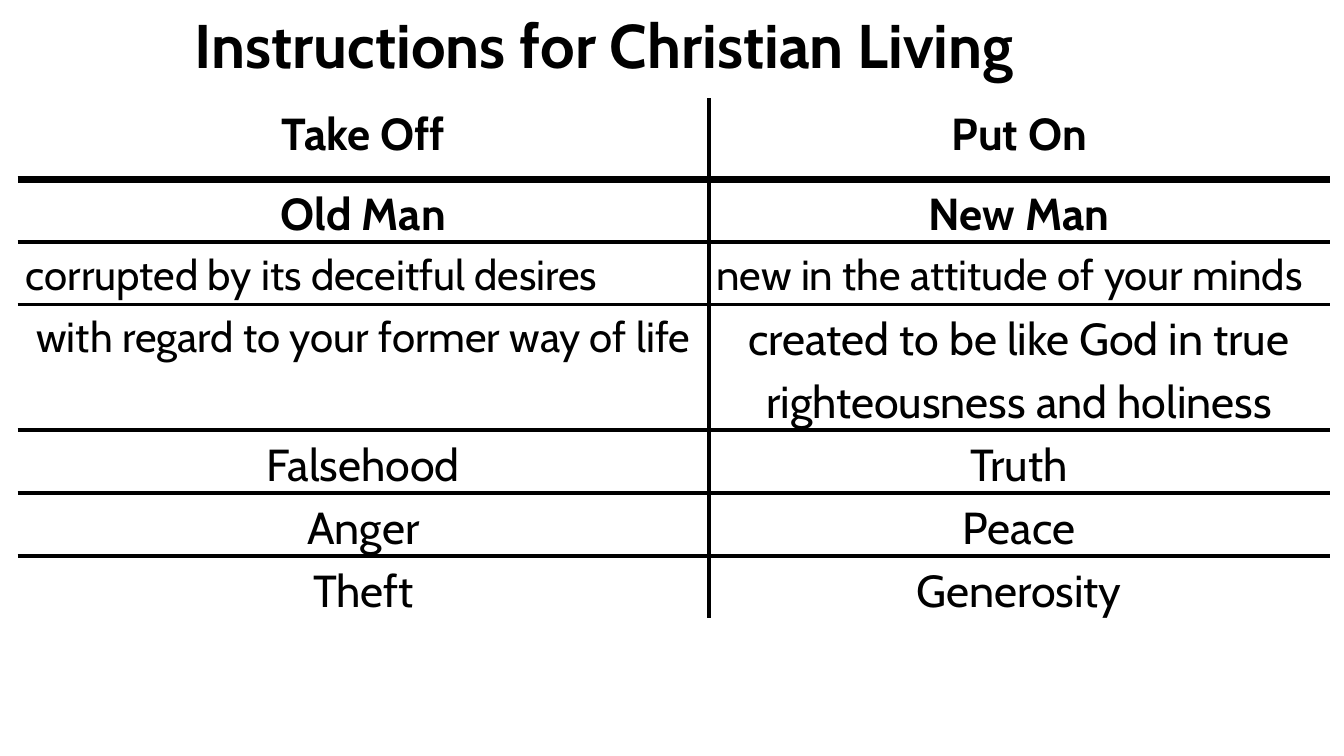
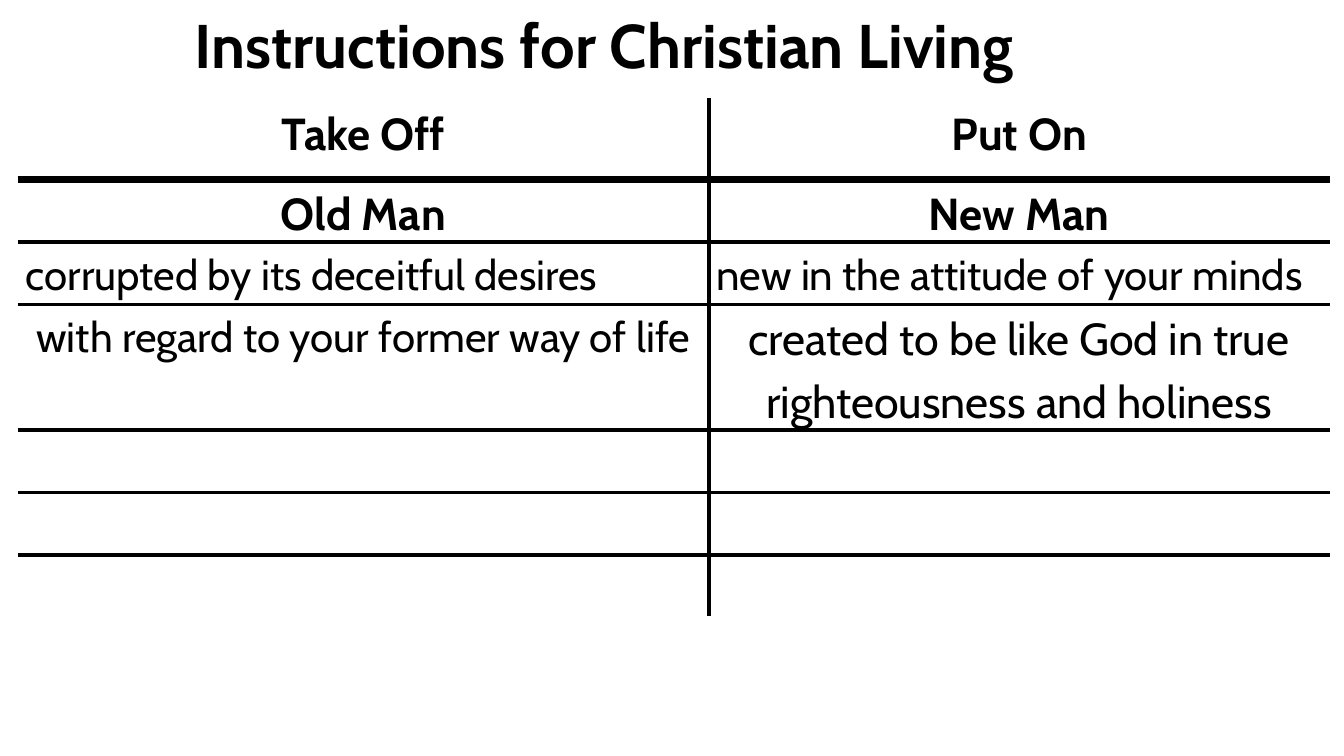
"""Builds two slides that contrast the old and the new way of life."""
from dataclasses import dataclass

from lxml.etree import SubElement
from pptx import Presentation
from pptx.dml.color import RGBColor
from pptx.enum.text import MSO_ANCHOR, MSO_AUTO_SIZE, PP_ALIGN
from pptx.oxml.ns import qn
from pptx.util import Cm, Pt


@dataclass(frozen=True)
class Theme:
    font: str = "Cabin"
    ink: str = "000000"
    paper: str = "FFFFFF"
    title_size: int = 44
    large: int = 32
    small: int = 30
    edge: int = 1
    rule: int = 3
    heavy_rule: int = 6


THEME = Theme()
TITLE = "Instructions for Christian Living"
HEADINGS = [("Take Off", "Put On"), ("Old Man", "New Man")]
DESCRIPTIONS = [
    ("corrupted by its deceitful desires", "new in the attitude of your minds"),
    ("with regard to your former way of life",
     "created to be like God in true righteousness and holiness"),
]
EXAMPLES = [("Falsehood", "Truth"), ("Anger", "Peace"), ("Theft", "Generosity")]
BLANKS = [("", "")] * len(EXAMPLES)
SLIDES = [HEADINGS + DESCRIPTIONS + examples for examples in (EXAMPLES, BLANKS)]

SMALL_TEXTS = {*DESCRIPTIONS[0], DESCRIPTIONS[1][0]}
LEFT_TEXTS = set(DESCRIPTIONS[0])
COLUMN_WIDTHS = (Cm(17.4), Cm(15.65))
HEADING_HEIGHT, LINE_HEIGHT = Cm(2.03), Cm(1.57)
ROW_HEIGHTS = [HEADING_HEIGHT] + [LINE_HEIGHT] * 2 + [2 * LINE_HEIGHT] + [LINE_HEIGHT] * 3


def style_text(paragraph, size, bold):
    for run in paragraph.runs:
        run.font.name = THEME.font
        run.font.size = Pt(size)
        run.font.bold = bold
        run.font.color.rgb = RGBColor.from_string(THEME.ink)


def add_title(slide):
    title = slide.shapes.title
    title.left, title.top, title.width, title.height = Cm(4.65), Cm(0), Cm(29.21), Cm(2.46)
    frame = title.text_frame
    frame.text = TITLE
    frame.word_wrap = True
    frame.auto_size = MSO_AUTO_SIZE.NONE
    frame.vertical_anchor = MSO_ANCHOR.MIDDLE
    heading = frame.paragraphs[0]
    heading.alignment = PP_ALIGN.LEFT
    heading.line_spacing = 0.9
    style_text(heading, THEME.title_size, True)


def horizontal_rule(boundary, row_count):
    if boundary in (0, row_count):
        return THEME.paper, THEME.edge
    return THEME.ink, THEME.heavy_rule if boundary == 1 else THEME.rule


def set_borders(cell, row, column, row_count):
    outer, divider = (THEME.paper, THEME.edge), (THEME.ink, THEME.rule)
    borders = {
        "a:lnL": divider if column else outer,
        "a:lnR": outer if column else divider,
        "a:lnT": horizontal_rule(row, row_count),
        "a:lnB": horizontal_rule(row + 1, row_count),
    }
    properties = cell._tc.get_or_add_tcPr()
    for side, (color, width) in borders.items():
        line = SubElement(properties, qn(side), w=str(Pt(width)))
        fill = SubElement(line, qn("a:solidFill"))
        SubElement(fill, qn("a:srgbClr"), val=color)


def fill_cell(cell, text, bold):
    cell.margin_left = cell.margin_right = Cm(0.19)
    cell.margin_top = cell.margin_bottom = 0
    cell.text_frame.text = text
    paragraph = cell.text_frame.paragraphs[0]
    paragraph.alignment = PP_ALIGN.LEFT if text in LEFT_TEXTS else PP_ALIGN.CENTER
    paragraph.line_spacing = 1.15
    paragraph.space_after = Pt(8)
    style_text(paragraph, THEME.small if text in SMALL_TEXTS else THEME.large, bold)


def add_comparison(slide, rows):
    table = slide.shapes.add_table(
        len(rows), len(COLUMN_WIDTHS), Cm(0.46), Cm(2.49),
        sum(COLUMN_WIDTHS), sum(ROW_HEIGHTS)).table
    table.first_row = table.horz_banding = False
    for column, width in zip(table.columns, COLUMN_WIDTHS):
        column.width = width
    for row, (texts, height) in enumerate(zip(rows, ROW_HEIGHTS)):
        table.rows[row].height = height
        for column, text in enumerate(texts):
            cell = table.cell(row, column)
            fill_cell(cell, text, row < len(HEADINGS))
            set_borders(cell, row, column, len(rows))
            cell.fill.background()


def main():
    deck = Presentation()
    deck.slide_width, deck.slide_height = Cm(33.87), Cm(19.05)
    for rows in SLIDES:
        slide = deck.slides.add_slide(deck.slide_layouts[5])
        add_comparison(slide, rows)
        add_title(slide)
    deck.save("out.pptx")


if __name__ == "__main__":
    main()
